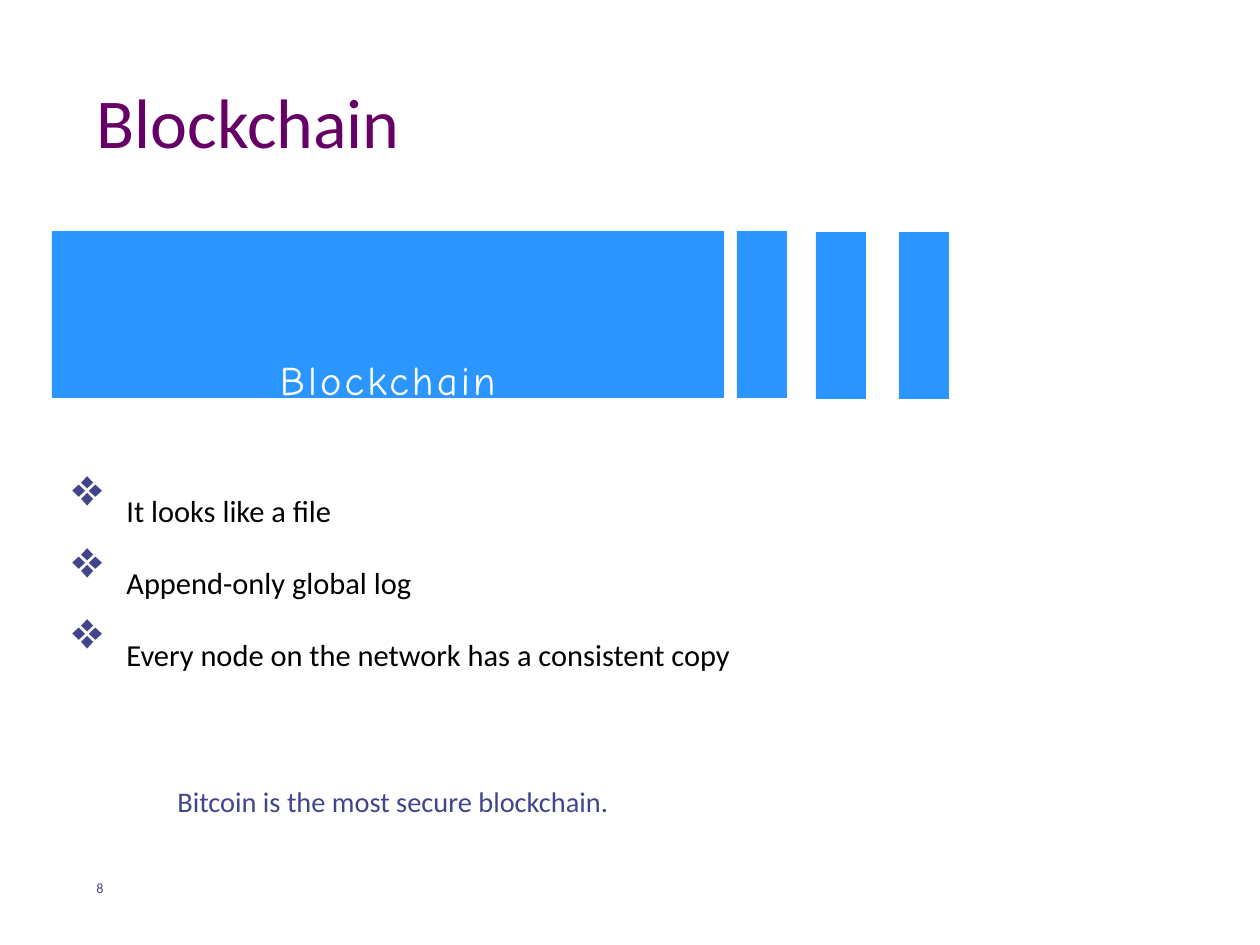
from dataclasses import dataclass
from lxml import etree
from pptx import Presentation
from pptx.dml.color import RGBColor
from pptx.enum.shapes import MSO_SHAPE
from pptx.enum.text import MSO_ANCHOR, PP_ALIGN
from pptx.oxml.ns import qn
from pptx.util import Emu, Pt

RECT = MSO_SHAPE.RECTANGLE
TOP, MID, BOTTOM = MSO_ANCHOR.TOP, MSO_ANCHOR.MIDDLE, MSO_ANCHOR.BOTTOM
LEFT, CENTER = PP_ALIGN.LEFT, PP_ALIGN.CENTER


@dataclass
class Theme:
    font: str = "Calibri"
    comic: str = "Comic Neue"
    title: str = "660066"
    ink: str = "40458C"
    block: str = "2B96FF"
    black: str = "000000"
    white: str = "FFFFFF"
    big: int = 40
    item: int = 30
    note: int = 28
    small: int = 14
    sub: int = -25000


T = Theme()


def px(*nums):
    return [Emu(round(n * 914400 / 126)) for n in nums]


def style(para, size, color, font=T.font, align=LEFT, sub=True):
    para.alignment = align
    for run in para.runs:
        run.font.size = Pt(size)
        run.font.name = font
        run.font.color.rgb = RGBColor.from_string(color)
        if sub:
            run._r.get_or_add_rPr().set("baseline", str(T.sub))


prs = Presentation()
prs.slide_width, prs.slide_height = px(1260, 945)
slide = prs.slides.add_slide(prs.slide_layouts[5])
shapes = slide.shapes

# Title
title = shapes.title
title.left, title.top, title.width, title.height = px(84, 42, 1103, 157)
title.text_frame.text = "Blockchain"
title.text_frame.vertical_anchor = MID
style(title.text_frame.paragraphs[0], T.big, T.title, sub=False)

# Chain of blocks
blocks = []
for x, y, wide in [(52, 231, 672), (737, 231, 50), (816, 232, 50), (899, 232, 50)]:
    block = shapes.add_shape(RECT, *px(x, y, wide, 167))
    block.shadow.inherit = False
    block.fill.solid()
    block.fill.fore_color.rgb = RGBColor.from_string(T.block)
    block.line.fill.background()
    blocks.append(block)

# Label on the long block
frame = blocks[0].text_frame
frame.margin_left, frame.margin_top, frame.margin_right, frame.margin_bottom = px(0, 82, 0, 0)
frame.vertical_anchor = MID
frame.text = "Blockchain"
label = frame.paragraphs[0]
style(label, T.big, T.white, T.comic, CENTER)
label.runs[0]._r.get_or_add_rPr().set("spc", "180")

# Bullet list
items = [
    "It looks like a file",
    "Append-only global log",
    "Every node on the network has a consistent copy",
]
frame = shapes.add_textbox(*px(60, 451, 1200, 257)).text_frame
frame.word_wrap = True
frame.text = "\n".join(items)
indent = px(54)[0]
for para in frame.paragraphs:
    props = para._p.get_or_add_pPr()
    props.set("marL", str(indent))
    props.set("indent", str(-indent))
    tint = etree.SubElement(props, qn("a:buClr"))
    etree.SubElement(tint, qn("a:srgbClr")).set("val", T.ink)
    etree.SubElement(props, qn("a:buChar")).set("char", "❖")
    style(para, T.item, T.black)

# Closing note and page number
for text, box, size, anchor in [
    ("Bitcoin is the most secure blockchain.", (165, 745, 977, 72), T.note, TOP),
    ("8", (84, 840, 84, 63), T.small, BOTTOM),
]:
    frame = shapes.add_textbox(*px(*box)).text_frame
    frame.word_wrap = True
    frame.vertical_anchor = anchor
    frame.text = text
    style(frame.paragraphs[0], size, T.ink)

prs.save("out.pptx")
